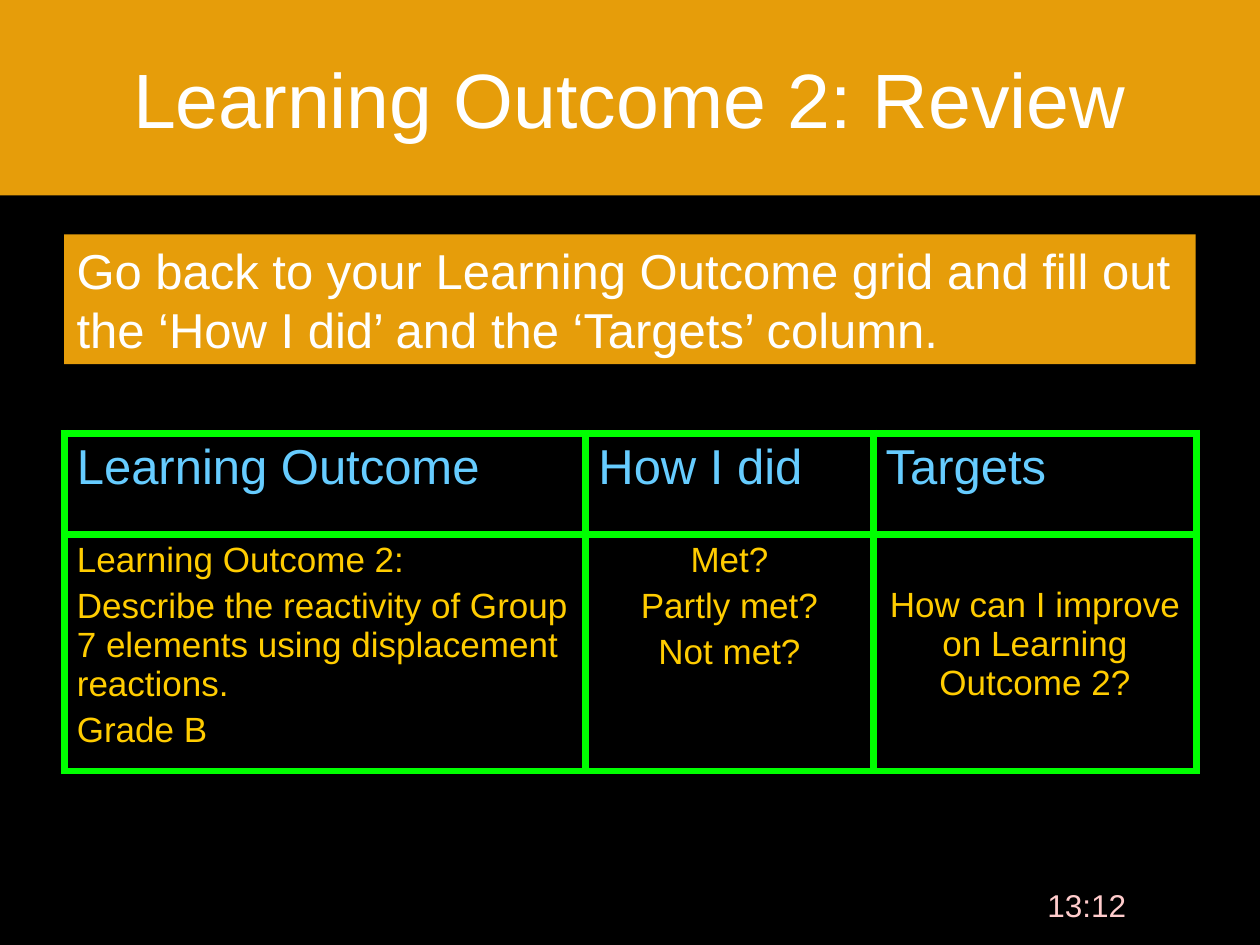
from lxml import etree
from pptx import Presentation
from pptx.dml.color import RGBColor
from pptx.enum.shapes import MSO_SHAPE
from pptx.enum.text import MSO_ANCHOR, PP_ALIGN
from pptx.oxml.ns import qn
from pptx.util import Inches, Pt

RECT = MSO_SHAPE.RECTANGLE
TOP, MIDDLE = MSO_ANCHOR.TOP, MSO_ANCHOR.MIDDLE
LEFT, CENTER = PP_ALIGN.LEFT, PP_ALIGN.CENTER
COLORS = {"black": "000000", "orange": "E69D0A", "white": "FFFFFF", "green": "00FF00",
          "blue": "66CCFF", "yellow": "FFCC00", "pink": "FFCCCC"}


def add_text(tf, lines, size, color, align=LEFT, before=0):
    tf.word_wrap = True
    for i, line in enumerate(lines):
        p = tf.paragraphs[0] if i == 0 else tf.add_paragraph()
        p.alignment = align
        p.space_before = Pt(before)
        r = p.add_run()
        r.text = line
        r.font.size = Pt(size)
        r.font.name = "Arial"
        r.font.color.rgb = RGBColor.from_string(COLORS[color])


def set_borders(cell, color, width):
    tc_pr = cell._tc.get_or_add_tcPr()
    for i, side in enumerate(("a:lnL", "a:lnR", "a:lnT", "a:lnB")):
        ln = etree.Element(qn(side), w=str(Pt(width)))
        fill = etree.SubElement(ln, qn("a:solidFill"))
        etree.SubElement(fill, qn("a:srgbClr"), val=COLORS[color])
        tc_pr.insert(i, ln)


prs = Presentation()
prs.slide_width, prs.slide_height = Inches(10), Inches(7.5)
s = prs.slides.add_slide(prs.slide_layouts[6])
s.background.fill.solid()
s.background.fill.fore_color.rgb = RGBColor.from_string(COLORS["black"])

# Clock
clock = s.shapes.add_textbox(Inches(7.84), Inches(6.98), Inches(1.57), Inches(0.52))
add_text(clock.text_frame, ["13:12"], 18, "pink", CENTER)

# Title band and instruction
panels = [
    (0, 0, 10, 1.55, "Learning Outcome 2: Review", 44, CENTER, MIDDLE),
    (0.51, 1.86, 8.98, 1.03,
     "Go back to your Learning Outcome grid and fill out the ‘How I did’ and the ‘Targets’ column.",
     28, LEFT, TOP),
]
for x, y, w, h, text, size, align, anchor in panels:
    sp = s.shapes.add_shape(RECT, Inches(x), Inches(y), Inches(w), Inches(h))
    sp.shadow.inherit = False
    sp.fill.solid()
    sp.fill.fore_color.rgb = RGBColor.from_string(COLORS["orange"])
    sp.line.fill.background()
    sp.text_frame.vertical_anchor = anchor
    add_text(sp.text_frame, [text], size, "white", align)

# Review grid
col_widths, row_heights = [4.14, 2.28, 2.57], [0.8, 1.75]
headers = ["Learning Outcome", "How I did", "Targets"]
details = [
    ["Learning Outcome 2:",
     "Describe the reactivity of Group 7 elements using displacement reactions.", "Grade B"],
    ["Met?", "Partly met?", "Not met?"],
    ["How can I improve on Learning Outcome 2?"],
]
table = s.shapes.add_table(2, 3, Inches(0.51), Inches(3.44), Inches(sum(col_widths)),
                           Inches(sum(row_heights))).table
for row, height in zip(table.rows, row_heights):
    row.height = Inches(height)
for c, width in enumerate(col_widths):
    table.columns[c].width = Inches(width)
    head, body = table.cell(0, c), table.cell(1, c)
    add_text(head.text_frame, [headers[c]], 28, "blue", before=5.6)
    add_text(body.text_frame, details[c], 20, "yellow", LEFT if c == 0 else CENTER, 4)
    for cell in (head, body):
        cell.fill.background()
        set_borders(cell, "green", 4.5)
table.cell(1, 1).fill.solid()
table.cell(1, 1).fill.fore_color.rgb = RGBColor.from_string(COLORS["black"])
table.cell(1, 2).margin_top = Inches(0.41)

prs.save("out.pptx")
